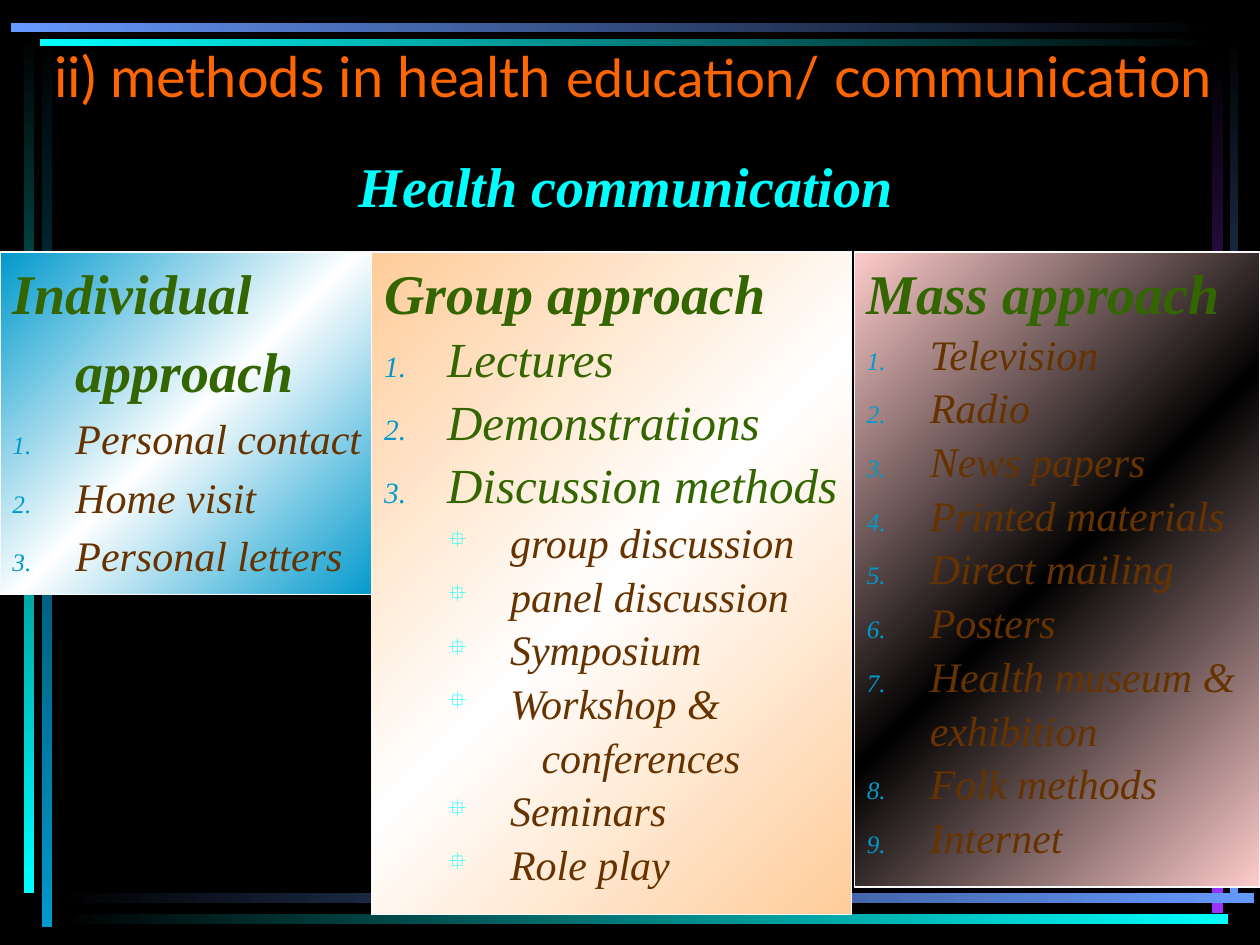
"""Build a slide that compares individual, group and mass methods of health communication."""
import copy
from dataclasses import dataclass

import lxml.etree
import pptx
import pptx.dml.color
import pptx.enum.shapes
import pptx.enum.text
import pptx.oxml.ns
import pptx.util

Pt = pptx.util.Pt
RGB = pptx.dml.color.RGBColor.from_string
qn = pptx.oxml.ns.qn


@dataclass(frozen=True)
class Theme:
    black: str = "000000"
    white: str = "FFFFFF"
    cyan: str = "00FFFF"
    blue: str = "0099CC"
    periwinkle: str = "6699FF"
    purple: str = "9933FF"
    orange: str = "FF6600"
    green: str = "336600"
    brown: str = "663300"
    peach: str = "FFCC99"
    pink: str = "FFCCCC"
    border: str = "F8F8F8"
    title_font: str = "Lato"
    body_font: str = "Times New Roman"
    marker_font: str = "Wingdings"
    heading: int = 32
    title_small: int = 30
    large: int = 28
    item: int = 24


theme = Theme()


def add_gradient_box(left, top, width, height, colors, angle):
    box = page.shapes.add_shape(pptx.enum.shapes.MSO_SHAPE.RECTANGLE,
                                Pt(left), Pt(top), Pt(width), Pt(height))
    box.shadow.inherit = False
    box.line.fill.background()
    box.fill.gradient()
    box.fill.gradient_angle = angle
    stops = box.element.spPr.find(qn("a:gradFill")).find(qn("a:gsLst"))
    if len(colors) == 3:
        stops.insert(1, copy.deepcopy(stops[0]))
    for index, (stop, color) in enumerate(zip(box.fill.gradient_stops, colors)):
        stop.position = index / (len(colors) - 1)
        stop.color.rgb = RGB(color)
    return box


def add_span(para, text, size, color, font=theme.body_font, bold=False, italic=True):
    span = para.add_run()
    span.text = text
    span.font.name = font
    span.font.size = Pt(size)
    span.font.color.rgb = RGB(color)
    span.font.bold = bold
    span.font.italic = italic


deck = pptx.Presentation()
deck.slide_width, deck.slide_height = Pt(720), Pt(540)
page = deck.slides.add_slide(deck.slide_layouts[5])
page.background.fill.solid()
page.background.fill.fore_color.rgb = RGB(theme.black)

DOWN, RIGHT, DIAGONAL = 270, 0, 315
bars = [
    (23.8, 20.2, 5.8, 509.8, (theme.black, theme.blue), DOWN),
    (13.7, 18, 5.8, 492.5, (theme.black, theme.cyan), DOWN),
    (702.7, 17.3, 5, 499, (theme.black, theme.periwinkle), DOWN),
    (692.6, 30.2, 6.5, 491.8, (theme.black, theme.purple), DOWN),
    (32.4, 510.5, 684, 5.8, (theme.black, theme.periwinkle), RIGHT),
    (32.4, 522, 669.6, 5.8, (theme.black, theme.cyan), RIGHT),
    (23, 22.3, 671, 4.3, (theme.cyan, theme.black), RIGHT),
    (6.1, 13.3, 688.3, 5, (theme.periwinkle, theme.black), RIGHT),
]
for bar in bars:
    add_gradient_box(*bar)

title = page.shapes.title
title.element.getparent().append(title.element)
title.left, title.top, title.width, title.height = Pt(23.8), Pt(24.5), Pt(696.2), Pt(41.8)
title.text_frame.auto_size = pptx.enum.text.MSO_AUTO_SIZE.NONE
title.text_frame.vertical_anchor = pptx.enum.text.MSO_ANCHOR.MIDDLE
para = title.text_frame.paragraphs[0]
para.alignment = pptx.enum.text.PP_ALIGN.LEFT
para.line_spacing = 0.9
for text, size in [("ii) methods in health ", theme.heading),
                   ("education", theme.title_small),
                   ("/ communication", theme.heading)]:
    add_span(para, text, size, theme.orange, theme.title_font, italic=False)

subtitle = page.shapes.add_textbox(Pt(198), Pt(82.8), Pt(327.6), Pt(45.4))
subtitle.text_frame.word_wrap = True
add_span(subtitle.text_frame.paragraphs[0], "Health communication",
         theme.heading, theme.cyan, bold=True)

INDENT = 36
TARGET = "°"
HEADING = (theme.heading, theme.green, True)
LARGE = (theme.large, theme.green, False)
ITEM = (theme.item, theme.brown, False)
panels = [
    (0, 214.6, 195.8, (theme.blue, theme.white, theme.blue), 1, [
        ("Individual", HEADING, None, 0),
        ("approach", HEADING, None, INDENT),
        *[(text, ITEM, 1, INDENT)
          for text in ("Personal contact", "Home visit", "Personal letters")],
    ]),
    (212.4, 274.3, 378.7, (theme.peach, theme.white, theme.peach), 0.9, [
        ("Group approach", HEADING, None, 0),
        *[(text, LARGE, 1, INDENT)
          for text in ("Lectures", "Demonstrations", "Discussion methods")],
        *[(text, ITEM, TARGET, 2 * INDENT)
          for text in ("group discussion", "panel discussion", "Symposium", "Workshop &")],
        ("conferences", ITEM, None, 2.5 * INDENT),
        *[(text, ITEM, TARGET, 2 * INDENT) for text in ("Seminars", "Role play")],
    ]),
    (488.2, 231.8, 362.9, (theme.pink, theme.black, theme.pink), 0.9, [
        ("Mass approach", HEADING, None, 0),
        *[(text, ITEM, 1, INDENT)
          for text in ("Television", "Radio", "News papers", "Printed materials",
                       "Direct mailing", "Posters", "Health museum &")],
        ("exhibition", ITEM, None, INDENT),
        *[(text, ITEM, 8, INDENT) for text in ("Folk methods", "Internet")],
    ]),
]
for left, width, height, colors, spacing, lines in panels:
    panel = add_gradient_box(left, 144, width, height, colors, DIAGONAL)
    panel.line.color.rgb = RGB(theme.border)
    panel.line.width = Pt(0.75)
    frame = panel.text_frame
    frame.word_wrap = True
    frame.vertical_anchor = pptx.enum.text.MSO_ANCHOR.TOP
    frame.margin_right = 0
    for index, (text, style, marker, margin) in enumerate(lines):
        size, color, bold = style
        para = frame.add_paragraph() if index else frame.paragraphs[0]
        para.alignment = pptx.enum.text.PP_ALIGN.LEFT
        para.level = 1 if margin > INDENT else 0
        para.line_spacing = 1.0 if style is HEADING else spacing
        para.space_before = Pt(round(size * 0.2, 1))
        add_span(para, text, size, color, bold=bold)
        props = para._p.get_or_add_pPr()
        props.set("marL", str(Pt(margin)))
        props.set("indent", str(Pt(-INDENT if marker else 0)))
        if not marker:
            lxml.etree.SubElement(props, qn("a:buNone"))
            continue
        numbered = isinstance(marker, int)
        tint = lxml.etree.SubElement(props, qn("a:buClr"))
        lxml.etree.SubElement(tint, qn("a:srgbClr"), val=theme.blue if numbered else theme.cyan)
        lxml.etree.SubElement(props, qn("a:buSzPct"), val="60000" if numbered else "55000")
        if numbered:
            number = lxml.etree.SubElement(props, qn("a:buAutoNum"), type="arabicPeriod")
            if marker > 1:
                number.set("startAt", str(marker))
        else:
            lxml.etree.SubElement(props, qn("a:buFont"), typeface=theme.marker_font,
                                  pitchFamily="2", charset="2")
            lxml.etree.SubElement(props, qn("a:buChar"), char=marker)

deck.save("out.pptx")
